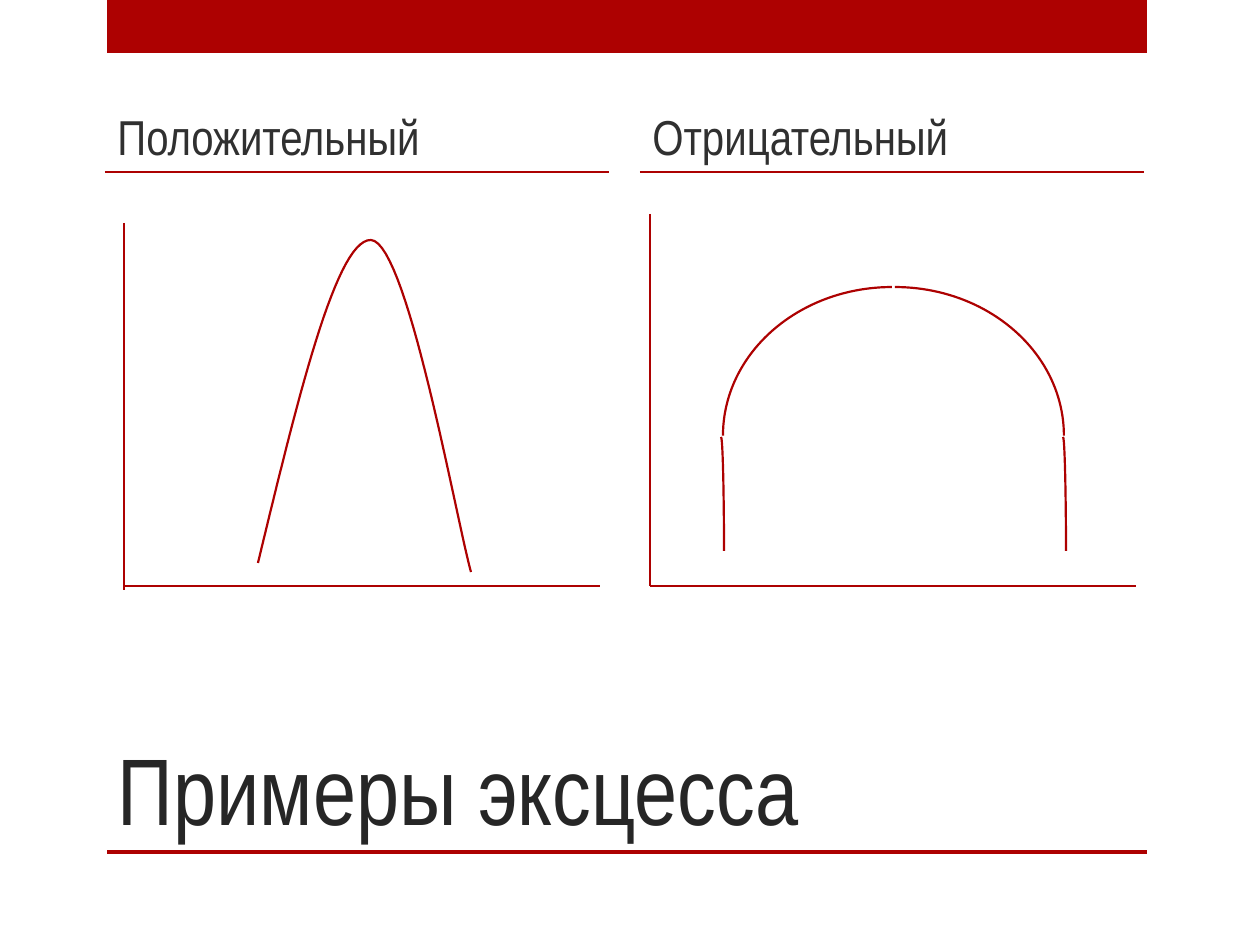
from lxml.etree import SubElement
from pptx import Presentation
from pptx.dml.color import RGBColor
from pptx.enum.shapes import MSO_CONNECTOR, MSO_SHAPE
from pptx.enum.text import MSO_ANCHOR, MSO_AUTO_SIZE, PP_ALIGN
from pptx.oxml.ns import qn
from pptx.util import Pt

SCALE = 914400 / 126  # EMU per px
RED = "AD0101"
FONT = "Arial Narrow"

# Content: places in px
TITLE = ("Примеры эксцесса", (105, 630, 935, 221))
HEADINGS = [("Положительный", 105), ("Отрицательный", 640)]
HEADING_TOP, HEADING_WIDTH, HEADING_HEIGHT = 84, 504, 88
BARS = [(107, 0, 1040, 53), (107, 850, 1040, 4)]
AXES = [
    (124, 223, 124, 590), (124, 586, 600, 586),
    (650, 214, 650, 586), (650, 586, 1136, 586),
]
ARCS = [  # box, mirrored
    ((726, 287, 338, 297), False),
    ((1060, 437, 6, 228), False),
    ((723, 287, 338, 297), True),
    ((718, 437, 6, 228), False),
]
PEAK_CURVE = [  # cubic Bezier segments
    ((258, 563), (297, 402), (336, 239), (371, 240)),
    ((371, 240), (407, 242), (455, 513), (471, 572)),
]
CURVE_STEPS = 30


def px(*lengths):
    return [round(length * SCALE) for length in lengths]


def color(value):
    return RGBColor.from_string(value)


def write(box, text, size, ink):
    frame = box.text_frame
    frame.word_wrap = True
    frame.auto_size = MSO_AUTO_SIZE.NONE
    frame.vertical_anchor = MSO_ANCHOR.BOTTOM
    para = frame.paragraphs[0]
    para.alignment = PP_ALIGN.LEFT
    span = para.add_run()
    span.text = text
    span.font.name = FONT
    span.font.size = Pt(size)
    span.font.color.rgb = color(ink)


def outline(shape):
    shape.line.color.rgb = color(RED)
    shape.line.width = Pt(1.25)


def add_line(page, *ends):
    line = page.shapes.add_connector(MSO_CONNECTOR.STRAIGHT, *px(*ends))
    outline(line)
    SubElement(line._element.spPr, qn("a:effectLst"))


def bezier_point(segment, t):
    weights = ((1 - t) ** 3, 3 * t * (1 - t) ** 2, 3 * t * t * (1 - t), t ** 3)
    return tuple(sum(w * point[axis] for w, point in zip(weights, segment))
                 for axis in (0, 1))


def main():
    deck = Presentation()
    deck.slide_width, deck.slide_height = px(1260, 945)
    page = deck.slides.add_slide(deck.slide_layouts[5])

    # Top band and bottom rule
    for place in BARS:
        bar = page.shapes.add_shape(MSO_SHAPE.RECTANGLE, *px(*place))
        bar.shadow.inherit = False
        bar.fill.solid()
        bar.fill.fore_color.rgb = color(RED)
        bar.line.fill.background()

    # Title
    text, place = TITLE
    title = page.shapes.title
    title.left, title.top, title.width, title.height = px(*place)
    write(title, text, size=54, ink="262626")

    # Column headings, each underlined
    for text, left in HEADINGS:
        box = page.shapes.add_textbox(
            *px(left, HEADING_TOP, HEADING_WIDTH, HEADING_HEIGHT))
        write(box, text, size=28, ink="303030")
        bottom = HEADING_TOP + HEADING_HEIGHT
        add_line(page, left, bottom, left + HEADING_WIDTH, bottom)

    # Axes of both graphs
    for ends in AXES:
        add_line(page, *ends)

    # Sharp peak
    points = [bezier_point(segment, step / CURVE_STEPS)
              for segment in PEAK_CURVE for step in range(CURVE_STEPS + 1)]
    builder = page.shapes.build_freeform(*px(*points[0]))
    builder.add_line_segments([px(*point) for point in points[1:]], close=False)
    peak = builder.convert_to_shape()
    peak.shadow.inherit = False
    peak.fill.background()
    outline(peak)

    # Flat dome
    for place, mirrored in ARCS:
        arc = page.shapes.add_shape(MSO_SHAPE.ARC, *px(*place))
        arc.shadow.inherit = False
        arc.fill.background()
        outline(arc)
        if mirrored:
            arc._element.spPr.xfrm.set("flipH", "1")

    deck.save("out.pptx")


if __name__ == "__main__":
    main()
